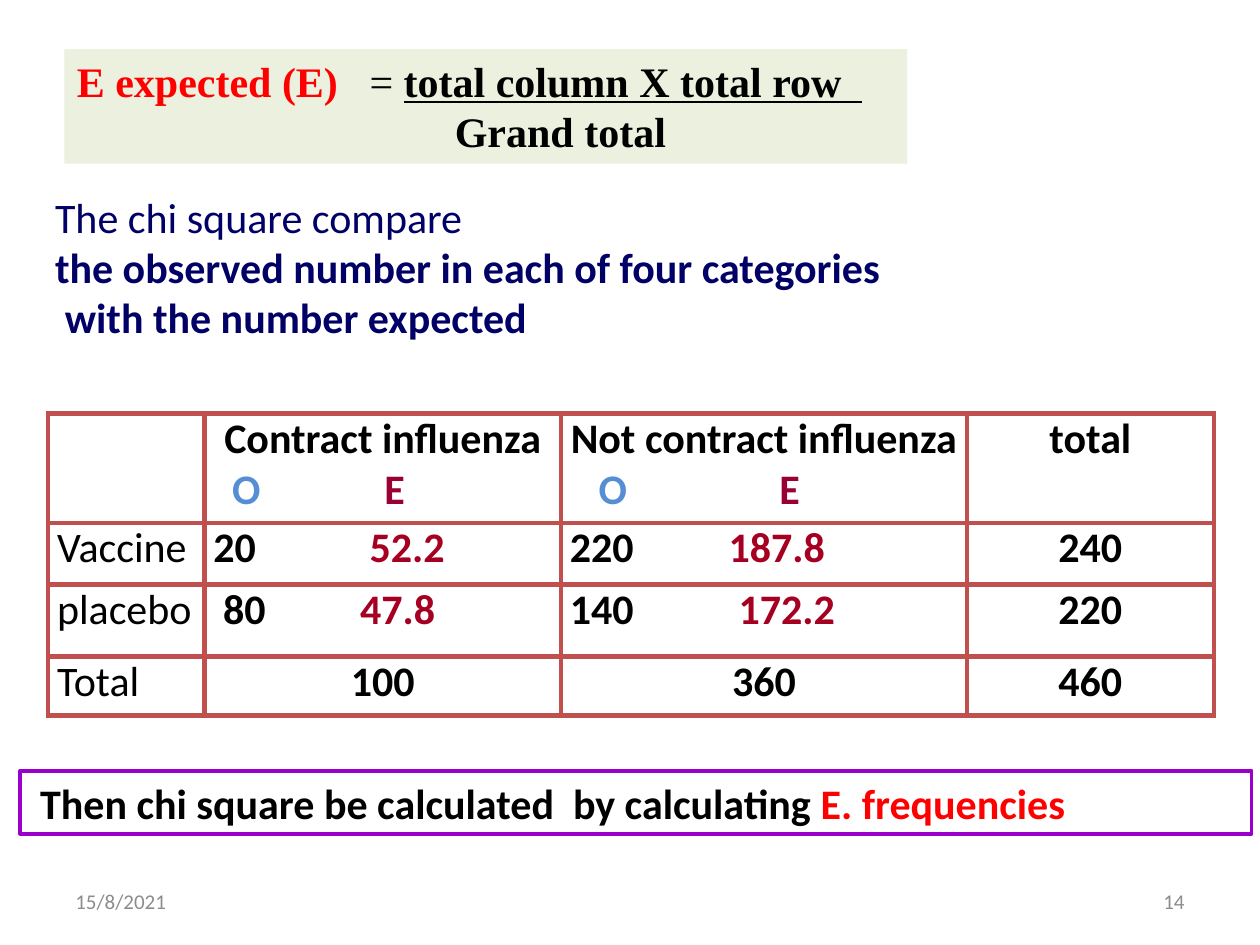
from lxml import etree
from pptx import Presentation
from pptx.dml.color import RGBColor
from pptx.enum import shapes, text
from pptx.oxml import ns
from pptx.util import Cm, Pt

BLACK, RED, NAVY, GREY = "000000", "FF0000", "000066", "8C8C8C"
BLUE, PLUM, CRIMSON = "558ED5", "990033", "A50021"
SERIF = "Times New Roman"
C, R = text.PP_ALIGN.CENTER, text.PP_ALIGN.RIGHT


def run(t, c=BLACK, **fmt):
    return t, c, {"name": "Calibri", "size": Pt(24), "bold": True, **fmt}


def para(*runs, align=None, tabs=()):
    return runs, align, tabs


def pair(observed, expected, *tabs):
    return [para(run(observed + "\t"), run(expected, CRIMSON), tabs=tabs)]


def heading(label, *tabs):
    return [para(run(label), align=C),
            para(run("\tO\t", BLUE), run("E", PLUM), tabs=tabs)]


def label(t):
    return [para(run(t, bold=False))]


def total(t):
    return [para(run(t), align=C)]


INTRO = [
    para(run("The chi square compare", NAVY, bold=False)),
    para(run("the observed number in each of four categories", NAVY)),
    para(run("\twith the number expected", NAVY), tabs=(0.2,)),
]
FORMULA = [
    para(run("E expected (E)\t", RED, name=SERIF),
         run("= ", name=SERIF, bold=False),
         run("total column X total row  ", name=SERIF, underline=True), tabs=(5.9,)),
    para(run("\tGrand total", name=SERIF), tabs=(7.62,)),
]
CONCLUSION = [para(run("Then chi square be calculated  by calculating "),
                   run("E. frequencies", RED))]
SMALL = {"c": GREY, "size": Pt(12), "bold": False}
DATE = [para(run("15/8/2021", **SMALL))]
NUMBER = [para(run("14", **SMALL), align=R)]

COLS = (3.15, 7.19, 8.18, 4.98)
ROWS = (2.21, 1.24, 1.45, 1.19)
CELLS = [
    [[], heading("Contract influenza", 0.38, 3.45),
     heading("Not contract influenza", 0.58, 4.22), total("total")],
    [label("Vaccine"), pair("20", "52.2", 3.15), pair("220", "187.8", 3.2), total("240")],
    [label("placebo"), pair("\t80", "47.8", 0.2, 2.96), pair("140", "172.2", 3.4), total("220")],
    [label("Total"), total("100"), total("360"), total("460")],
]


def rgb(h):
    return RGBColor.from_string(h)


def write(tf, paras):
    for i, (runs, align, tabs) in enumerate(paras):
        p = tf.add_paragraph() if i else tf.paragraphs[0]
        p.alignment = align
        if tabs:
            lst = etree.SubElement(p._p.get_or_add_pPr(), ns.qn("a:tabLst"))
            for pos in tabs:
                etree.SubElement(lst, ns.qn("a:tab"), pos=str(Cm(pos)), algn="l")
        for t, c, fmt in runs:
            r = p.add_run()
            r.text = t
            for key, value in fmt.items():
                setattr(r.font, key, value)
            r.font.color.rgb = rgb(c)


def add_text(s, box, paras, **frame):
    sp = s.shapes.add_textbox(*map(Cm, box))
    fmt = {"word_wrap": True, **frame}
    for key, value in fmt.items():
        setattr(sp.text_frame, key, value)
    write(sp.text_frame, paras)


def add_box(s, box, paras, fill=None, line=None, inset=0.25):
    sp = s.shapes.add_shape(shapes.MSO_SHAPE.RECTANGLE, *map(Cm, box))
    sp.shadow.inherit = False
    if fill:
        sp.fill.solid()
        sp.fill.fore_color.rgb = rgb(fill)
    else:
        sp.fill.background()
    if line:
        sp.line.color.rgb = rgb(line)
        sp.line.width = Pt(2.25)
    else:
        sp.line.fill.background()
    tf = sp.text_frame
    tf.vertical_anchor = text.MSO_ANCHOR.TOP
    tf.margin_left = Cm(inset)
    write(tf, paras)
    for p in tf.paragraphs:
        p.alignment = text.PP_ALIGN.LEFT


def add_borders(cell, color, width):
    tcPr = cell._tc.get_or_add_tcPr()
    for i, side in enumerate(("lnL", "lnR", "lnT", "lnB")):
        ln = etree.Element(ns.qn("a:" + side), w=str(Pt(width)))
        fill = etree.SubElement(ln, ns.qn("a:solidFill"))
        etree.SubElement(fill, ns.qn("a:srgbClr"), val=color)
        tcPr.insert(i, ln)


def add_grid(s, left, top):
    tbl = s.shapes.add_table(len(ROWS), len(COLS), Cm(left), Cm(top),
                             Cm(sum(COLS)), Cm(sum(ROWS))).table
    for col, w in zip(tbl.columns, COLS):
        col.width = Cm(w)
    for row, h, contents in zip(tbl.rows, ROWS, CELLS):
        row.height = Cm(h)
        for cell, paras in zip(row.cells, contents):
            cell.margin_left = cell.margin_right = Cm(0.18)
            cell.margin_top = cell.margin_bottom = 0
            cell.fill.solid()
            cell.fill.fore_color.rgb = rgb("FFFFFF")
            add_borders(cell, "C0504D", 3)
            write(cell.text_frame, paras)


def main():
    prs = Presentation()
    prs.slide_width, prs.slide_height = Cm(25.4), Cm(19.05)
    s = prs.slides.add_slide(prs.slide_layouts[6])
    add_text(s, (0.86, 3.73, 24.13, 3.33), INTRO)
    add_grid(s, 0.97, 8.33)
    add_box(s, (1.3, 0.99, 16.99, 2.31), FORMULA, fill="EBF1DE")
    for left, paras in ((1.27, DATE), (18.21, NUMBER)):
        add_text(s, (left, 17.65, 5.92, 1.02), paras,
                 vertical_anchor=text.MSO_ANCHOR.MIDDLE)
    add_box(s, (0.41, 15.54, 24.82, 1.27), CONCLUSION, line="9900CC", inset=0.4)
    prs.save("out.pptx")


if __name__ == "__main__":
    main()
